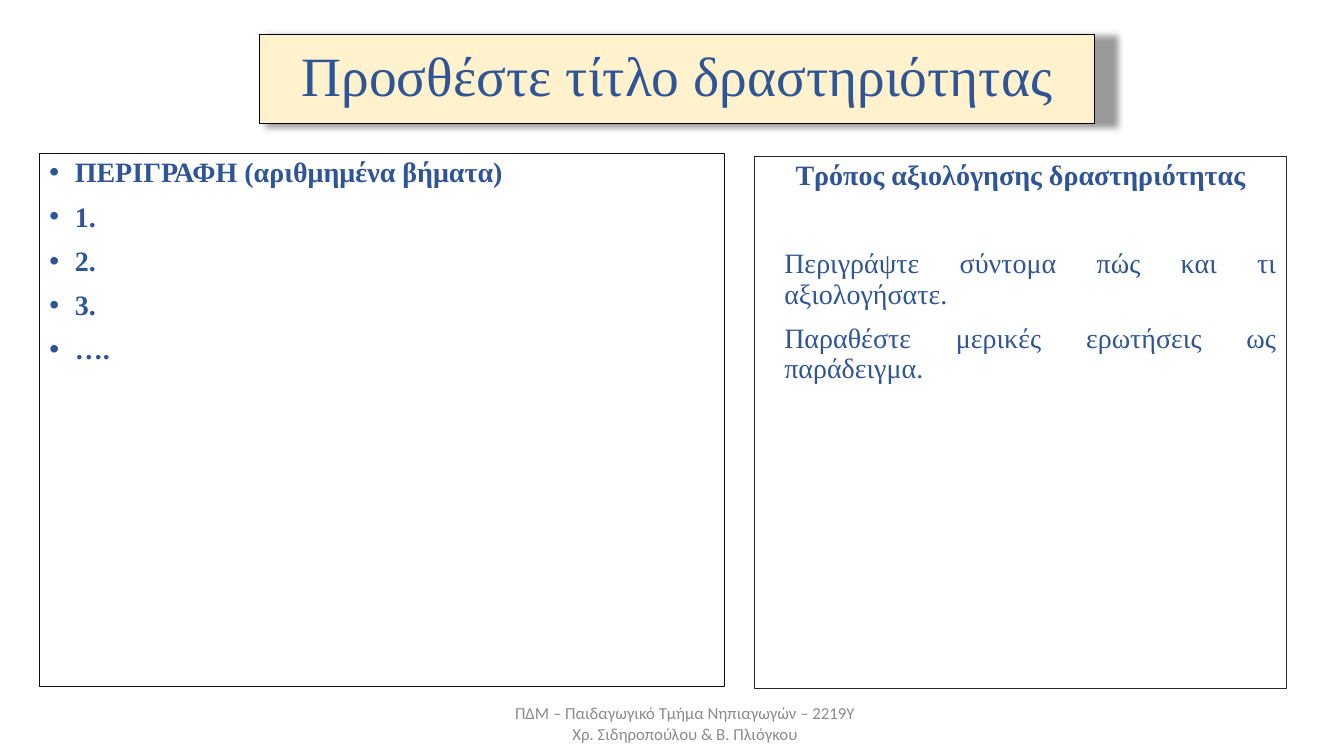
from dataclasses import dataclass

from lxml.etree import SubElement
from pptx import Presentation
from pptx.dml.color import RGBColor
from pptx.enum.text import MSO_ANCHOR as Anchor, MSO_AUTO_SIZE as AutoSize, PP_ALIGN as Align
from pptx.oxml.ns import qn
from pptx.shapes.base import BaseShape
from pptx.text.text import _Paragraph as Paragraph
from pptx.util import Cm, Pt

SERIF = "Times New Roman"
BLUE = "2F5597"


@dataclass(frozen=True)
class Line:
    text: str
    size: float = 20
    font: str = SERIF
    color: str = BLUE
    bold: bool = False
    align: Align = Align.LEFT
    before: float = 0
    spacing: float = 0.9
    margin: float = 0
    indent: float = 0
    bullet: str = ""


@dataclass(frozen=True)
class Panel:
    left: float
    top: float
    width: float
    height: float
    lines: tuple[Line, ...]
    anchor: Anchor = Anchor.TOP
    outline: str = ""
    fill: str = ""


def rgb(value: str) -> RGBColor:
    return RGBColor.from_string(value)


def write_line(paragraph: Paragraph, line: Line) -> None:
    properties = paragraph._p.get_or_add_pPr()
    properties.set("marL", str(Cm(line.margin)))
    properties.set("indent", str(Cm(line.indent)))
    if line.bullet:
        SubElement(properties, qn("a:buChar")).set("char", line.bullet)
    else:
        SubElement(properties, qn("a:buNone"))
    paragraph_format = {
        "alignment": line.align,
        "line_spacing": line.spacing,
        "space_before": Pt(line.before),
        "space_after": Pt(0),
    }
    for name, value in paragraph_format.items():
        setattr(paragraph, name, value)
    run = paragraph.add_run()
    run.text = line.text
    for name, value in {"size": Pt(line.size), "name": line.font, "bold": line.bold}.items():
        setattr(run.font, name, value)
    run.font.color.rgb = rgb(line.color)


def draw_panel(shape: BaseShape, panel: Panel) -> None:
    for name in ("left", "top", "width", "height"):
        setattr(shape, name, Cm(getattr(panel, name)))
    if panel.fill:
        shape.fill.solid()
        shape.fill.fore_color.rgb = rgb(panel.fill)
    if panel.outline:
        shape.line.color.rgb = rgb(panel.outline)
        shape.line.width = Pt(0.75)
    frame = shape.text_frame
    frame_format = {
        "word_wrap": True,
        "auto_size": AutoSize.NONE,
        "vertical_anchor": panel.anchor,
    }
    for name, value in frame_format.items():
        setattr(frame, name, value)
    for index, line in enumerate(panel.lines):
        paragraph = frame.add_paragraph() if index else frame.paragraphs[0]
        write_line(paragraph, line)


def add_glow_shadow(shape: BaseShape) -> None:
    effects = SubElement(shape._element.spPr, qn("a:effectLst"))
    shadow = SubElement(effects, qn("a:outerShdw"))
    shadow_format = {
        "blurRad": str(Pt(5)),
        "sx": "102000",
        "sy": "102000",
        "algn": "ctr",
        "rotWithShape": "0",
    }
    for name, value in shadow_format.items():
        shadow.set(name, value)
    color = SubElement(shadow, qn("a:srgbClr"))
    color.set("val", "000000")
    SubElement(color, qn("a:alpha")).set("val", "40000")


TITLE = Panel(
    6.55, 0.87, 21.03, 2.24,
    (Line("Προσθέστε τίτλο δραστηριότητας", size=39.6, align=Align.CENTER),),
    anchor=Anchor.MIDDLE, outline="000000", fill="FFF2CC",
)
STEPS = Panel(
    0.99, 3.87, 17.27, 13.43,
    tuple(
        Line(text, bold=True, before=10 if index else 0, margin=0.64, indent=-0.64, bullet="•")
        for index, text in enumerate(("ΠΕΡΙΓΡΑΦΗ (αριθμημένα βήματα)", "1.", "2.", "3.", "…."))
    ),
    outline="0D0D0D",
)
ASSESSMENT = Panel(
    19.02, 3.94, 13.4, 13.42,
    (
        Line("Τρόπος αξιολόγησης δραστηριότητας", bold=True, align=Align.CENTER),
        Line("Περιγράψτε σύντομα πώς και τι αξιολογήσατε.",
             align=Align.JUSTIFY, before=41.4, margin=0.49),
        Line("Παραθέστε μερικές ερωτήσεις ως παράδειγμα.",
             align=Align.JUSTIFY, before=10, margin=0.49),
    ),
    outline="262626",
)
FOOTER = Panel(
    9.3, 17.63, 15.93, 1.19,
    tuple(
        Line(text, size=12, font="Calibri", color="8C8C8C", align=Align.CENTER, spacing=1.0)
        for text in ("ΠΔΜ – Παιδαγωγικό Τμήμα Νηπιαγωγών – 2219Υ", "Χρ. Σιδηροπούλου & Β. Πλιόγκου")
    ),
    anchor=Anchor.MIDDLE,
)


def main() -> None:
    presentation = Presentation()
    presentation.slide_width = Cm(33.87)
    presentation.slide_height = Cm(19.05)
    slide = presentation.slides.add_slide(presentation.slide_layouts.get_by_name("Two Content"))
    title, steps, assessment = slide.placeholders
    footer = slide.shapes.add_textbox(0, 0, 0, 0)
    panels = ((title, TITLE), (steps, STEPS), (assessment, ASSESSMENT), (footer, FOOTER))
    for shape, panel in panels:
        draw_panel(shape, panel)
    add_glow_shadow(title)
    presentation.save("out.pptx")


if __name__ == "__main__":
    main()
